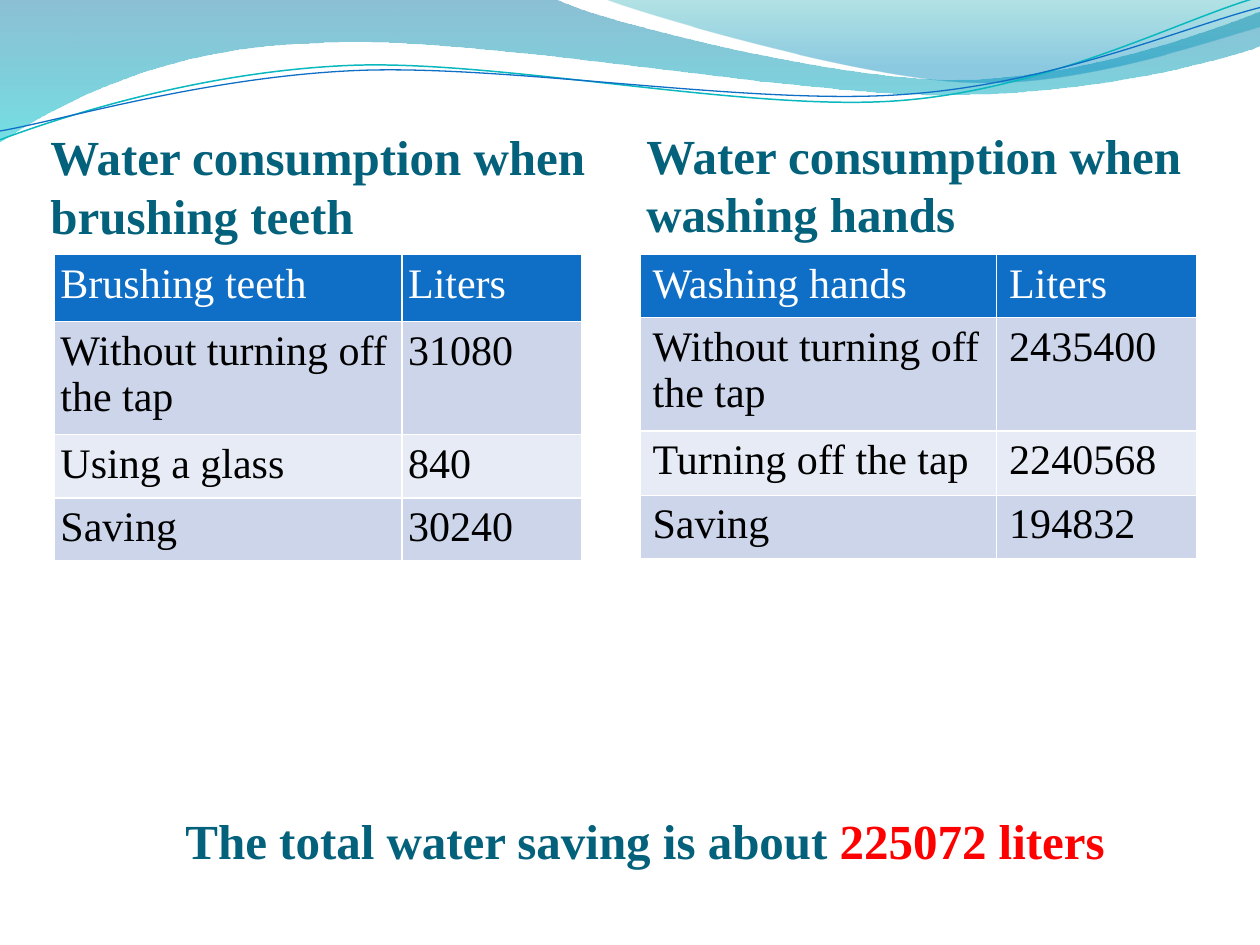
from lxml.etree import SubElement
from pptx import Presentation
from pptx.dml.color import RGBColor
from pptx.enum.text import MSO_ANCHOR, PP_ALIGN
from pptx.oxml.ns import qn
from pptx.util import Inches, Pt

FONT = "Times New Roman"
COLORS = {
    "title": "04617B", "alert": "FF0000", "text": "000000", "white": "FFFFFF",
    "head": "0F6FC6", "odd": "CCD5EA", "even": "E7EBF5", "teal": "0AB8BF",
    "sea": "0074A1", "aqua": "00C6CF", "jade": "00A1A9", "sky": "008BBF",
}
UNIT = 100  # path units per inch

# Each wave is a start point, then line ends (2 numbers) or Bezier curves (6)
BAND = [(0, 0), (4.4, -0.01), (4.76, 0.17, 6.64, 0.63, 7.58, 0.63),
        (8.53, 0.63, 9.58, 0.26, 10, 0.09), (10.01, 0.36),
        (9.83, 0.44, 8.7, 0.76, 7.46, 0.75), (6.22, 0.75, 3.82, 0.28, 2.57, 0.34),
        (1.29, 0.36, 0.46, 0.83, -0.01, 1.13), (0, 0)]
CREST = [(4.79, -0.01), (5.09, 0.11, 6.82, 0.62, 7.69, 0.65),
         (8.56, 0.69, 9.61, 0.32, 10, 0.21), (10, 0), (4.79, -0.01)]
UPPER = [(0, 1.11), (0.48, 0.93, 1.58, 0.57, 2.77, 0.52),
         (3.95, 0.47, 5.93, 0.89, 7.13, 0.8), (8.33, 0.71, 9.38, 0.15, 9.98, -0.02)]
LOWER = [(0, 1.04), (0.47, 0.96, 1.64, 0.61, 2.83, 0.56),
         (4.03, 0.51, 5.97, 0.84, 7.17, 0.75), (8.36, 0.67, 9.41, 0.21, 10, 0.06)]

BRUSH = [("Brushing teeth", "Liters"), ("Without turning off the tap", "31080"),
         ("Using a glass", "840"), ("Saving", "30240")]
WASH = [("Washing hands", "Liters"), ("Without turning off the tap", "2435400"),
        ("Turning off the tap", "2240568"), ("Saving", "194832")]


def color(name):
    return RGBColor.from_string(COLORS[name])


def style(run, size, name, bold):
    run.font.name, run.font.size, run.font.bold = FONT, Pt(size), bold
    run.font.color.rgb = color(name)


def add_wave(slide, wave, close):
    """Draw the ends as a freeform, then bend its lines into curves."""
    parts = [[round(n * UNIT) for n in part] for part in wave]
    ends = [part[-2:] for part in parts]
    left, top = map(min, zip(*ends))
    pen = slide.shapes.build_freeform(*ends[0], scale=Inches(1) / UNIT)
    pen.add_line_segments(ends[1:], close=close)
    shape = pen.convert_to_shape()
    shape.shadow.inherit = False
    lines = list(shape._element.iter(qn("a:lnTo")))
    for line, part in zip(lines, parts[1:]):
        if len(part) == 6:
            end = line[0]
            line.tag = qn("a:cubicBezTo")
            for x, y in (part[:2], part[2:4]):
                SubElement(line, qn("a:pt"), x=str(x - left), y=str(y - top))
            line.append(end)
    return shape


def add_area(slide, wave, stops):
    shape = add_wave(slide, wave, True)
    shape.line.fill.background()
    shape.fill.gradient()
    shape.fill.gradient_angle = 270
    for stop, (place, name, _) in zip(shape.fill.gradient_stops, stops):
        stop.position = place
        stop.color.rgb = color(name)
    tints = shape._element.iter(qn("a:srgbClr"))
    for tint, (_, _, alpha) in zip(tints, stops):
        SubElement(tint, qn("a:alpha"), val=str(alpha * 1000))


def add_curve(slide, wave, name, width):
    shape = add_wave(slide, wave, False)
    shape.fill.background()
    shape.line.color.rgb = color(name)
    shape.line.width = Pt(width)


def add_text(slide, box, parts, align=PP_ALIGN.LEFT):
    frame = slide.shapes.add_textbox(*map(Inches, box)).text_frame
    frame.word_wrap = True
    frame.vertical_anchor = MSO_ANCHOR.MIDDLE
    frame.margin_left = frame.margin_right = Inches(0.05)
    frame.margin_top = frame.margin_bottom = 0
    para = frame.paragraphs[0]
    para.alignment = align
    for text, name in parts:
        run = para.add_run()
        run.text = text
        style(run, 28, name, True)


def add_grid(slide, left, rows, widths, heights, inset):
    box = (left, 2.02, sum(widths), sum(heights))
    table = slide.shapes.add_table(len(rows), len(widths), *map(Inches, box)).table
    for col, width in zip(table.columns, widths):
        col.width = Inches(width)
    for r, (row, height) in enumerate(zip(rows, heights)):
        table.rows[r].height = Inches(height)
        back = "head" if r == 0 else "odd" if r % 2 else "even"
        for c, text in enumerate(row):
            cell = table.cell(r, c)
            cell.fill.solid()
            cell.fill.fore_color.rgb = color(back)
            cell.margin_left = cell.margin_right = Inches(inset)
            cell.margin_top = cell.margin_bottom = Inches(0.05)
            para = cell.text_frame.paragraphs[0]
            para.text = text
            style(para.runs[0], 24, "text" if r else "white", False)


def main():
    deck = Presentation()
    deck.slide_width, deck.slide_height = Inches(10), Inches(7.5)
    slide = deck.slides.add_slide(deck.slide_layouts[6])

    # Waves along the top
    add_area(slide, BAND, [(0, "sea", 45), (1, "aqua", 55)])
    add_area(slide, CREST, [(0, "jade", 30), (0.8, "sky", 45)])
    add_curve(slide, UPPER, "teal", 0.85)
    add_curve(slide, LOWER, "head", 0.75)

    # Headings
    lead = "Water consumption when "
    add_text(slide, (0.35, 0.84, 4.49, 1.26), [(lead + "brushing teeth", "title")])
    add_text(slide, (5.08, 0.99, 4.72, 0.94), [(lead + "washing hands", "title")])

    # Tables
    add_grid(slide, 0.43, BRUSH, (2.76, 1.43), (0.53, 0.53, 0.41, 0.41), 0.05)
    add_grid(slide, 5.08, WASH, (2.83, 1.59), (0.41, 0.82, 0.51, 0.47), 0.1)

    # Total
    add_text(slide, (0.83, 6.35, 8.58, 0.63),
             [("The total water saving is about ", "title"), ("225072 liters", "alert")],
             PP_ALIGN.CENTER)

    deck.save("out.pptx")


if __name__ == "__main__":
    main()
